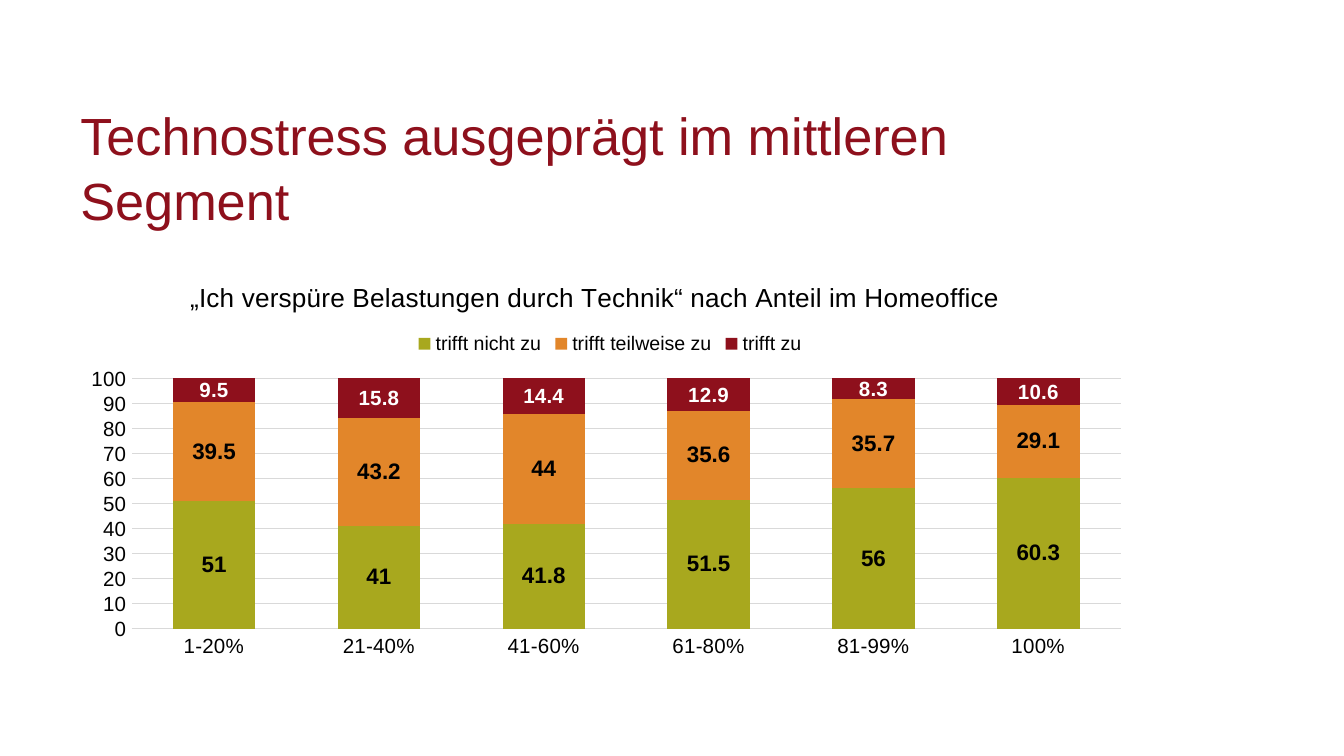
from pptx import Presentation
from pptx.chart.data import CategoryChartData as Data
from pptx.dml.color import RGBColor as RGB
from pptx.enum.chart import XL_CHART_TYPE as Kind
from pptx.enum.chart import XL_LEGEND_POSITION as Place
from pptx.enum.chart import XL_TICK_MARK as Tick
from pptx.oxml import parse_xml
from pptx.oxml.ns import nsdecls, qn
from pptx.util import Cm, Pt

HUES = {
    "red": "8E101C",
    "orange": "E2862A",
    "green": "A8A81E",
    "grey": "D9D9D9",
    "black": "000000",
    "white": "FFFFFF",
}
CATS = ["1-20%", "21-40%", "41-60%", "61-80%", "81-99%", "100%"]
ROWS = [
    ("trifft nicht zu", [51, 41, 41.8, 51.5, 56, 60.3], "green", "black", 12),
    ("trifft teilweise zu", [39.5, 43.2, 44, 35.6, 35.7, 29.1], "orange", "black", 12),
    ("trifft zu", [9.5, 15.8, 14.4, 12.9, 8.3, 10.6], "red", "white", 11),
]


class Deck:
    def __init__(self, width, height, face):
        self.file = Presentation()
        self.file.slide_width = Cm(width)
        self.file.slide_height = Cm(height)
        self.slide = self.file.slides.add_slide(self.file.slide_layouts[6])
        self.face = face

    def style(self, font, size, hue="black", bold=False):
        font.name = self.face
        font.size = Pt(size)
        font.bold = bold
        font.color.rgb = RGB.from_string(HUES[hue])

    def rule(self, line):
        line.color.rgb = RGB.from_string(HUES["grey"])
        line.width = Pt(0.75)

    def head(self, text, box, size, hue):
        frame = self.slide.shapes.add_textbox(*map(Cm, box)).text_frame
        frame.word_wrap = True
        frame.margin_top = Cm(0.22)
        para = frame.paragraphs[0]
        para.text = text
        para.line_spacing = 1.03
        self.style(para.font, size, hue)

    def pin(self, part, index, inner=False, **spots):
        for old in part.findall(qn("c:layout")):
            part.remove(old)
        tags = '<c:layoutTarget val="inner"/>' if inner else ""
        tags += "".join(f'<c:{key}Mode val="edge"/>' for key in "xy")
        tags += "".join(f'<c:{key} val="{val}"/>' for key, val in spots.items())
        part.insert(index, parse_xml(
            f'<c:layout {nsdecls("c")}><c:manualLayout>{tags}'
            "</c:manualLayout></c:layout>"))

    def stack(self, title, box, cats, rows):
        data = Data()
        data.categories = cats
        for name, vals, *_ in rows:
            data.add_series(name, vals)
        chart = self.slide.shapes.add_chart(
            Kind.COLUMN_STACKED, *map(Cm, box), data).chart
        self.style(chart.font, 10)

        chart.has_title = True
        para = chart.chart_title.text_frame.paragraphs[0]
        para.text = title
        self.style(para.font, 14)
        chart.chart_title.include_in_layout = False

        chart.has_legend = True
        chart.legend.position = Place.TOP
        chart.legend.include_in_layout = False
        self.style(chart.legend.font, 10.5)

        for axis in (chart.category_axis, chart.value_axis):
            axis.major_tick_mark = axis.minor_tick_mark = Tick.NONE
            self.style(axis.tick_labels.font, 11)
        self.rule(chart.category_axis.format.line)
        scale = chart.value_axis
        scale.minimum_scale, scale.maximum_scale, scale.major_unit = 0, 100, 10
        scale.format.line.fill.background()
        self.rule(scale.major_gridlines.format.line)

        plot = chart.plots[0]
        plot.gap_width = plot.overlap = 100
        plot.vary_by_categories = False
        for bars, (_, _, hue, ink, size) in zip(plot.series, rows):
            bars.format.fill.solid()
            bars.format.fill.fore_color.rgb = RGB.from_string(HUES[hue])
            labels = bars.data_labels
            labels.show_value = True
            self.style(labels.font, size, ink, True)

        root = chart.element if hasattr(chart, "element") else chart._chartSpace
        body = root.find(qn("c:chart"))
        self.pin(body.find(qn("c:title")), 1, x=0.11, y=0.05)
        self.pin(body.find(qn("c:legend")), 1, x=0.32, y=0.18, w=0.37, h=0.07)
        self.pin(body.find(qn("c:plotArea")), 0, True, x=0.06, y=0.3, w=0.92, h=0.61)


def main():
    deck = Deck(25.4, 14.29, "Arial")
    deck.head("Technostress ausgeprägt im mittleren Segment",
              (1.27, 1.7, 16.97, 2.9), 28, "red")
    deck.stack("„Ich verspüre Belastungen durch Technik“ nach Anteil im Homeoffice",
               (1.27, 4.83, 20.32, 7.75), CATS, ROWS)
    deck.file.save("out.pptx")


if __name__ == "__main__":
    main()
